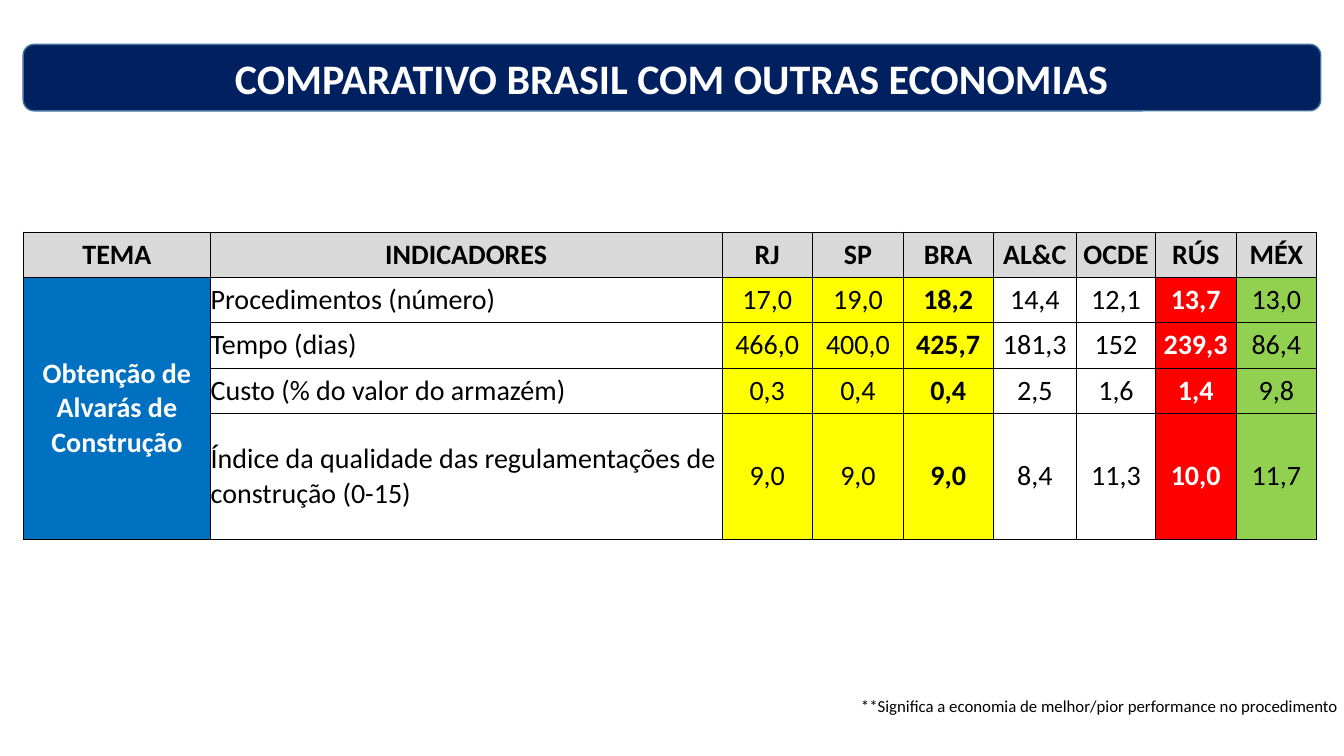
from dataclasses import dataclass

from lxml.etree import SubElement
from pptx import Presentation
from pptx.dml.color import RGBColor
from pptx.enum.shapes import MSO_SHAPE as Shape
from pptx.enum.text import MSO_ANCHOR as Anchor, MSO_AUTO_SIZE as AutoSize, PP_ALIGN as Align
from pptx.oxml.ns import qn
from pptx.util import Inches, Pt


@dataclass(frozen=True)
class Theme:
    font: str = "Calibri"
    title_size: int = 30
    table_size: int = 20
    note_size: int = 12
    black: str = "000000"
    white: str = "FFFFFF"
    navy: str = "002060"
    outline: str = "43739E"
    gray: str = "D9D9D9"
    blue: str = "0070C0"
    yellow: str = "FFFF00"
    red: str = "FF0000"
    green: str = "92D050"


theme = Theme()


def style_text(frame, size, color, bold=False, align=Align.CENTER):
    para = frame.paragraphs[0]
    para.alignment = align
    for span in para.runs:
        span.font.name = theme.font
        span.font.size = Pt(size)
        span.font.bold = bold
        span.font.color.rgb = RGBColor.from_string(color)


def add_borders(cell):
    properties = cell._tc.get_or_add_tcPr()
    for side in ("lnL", "lnR", "lnT", "lnB"):
        line = SubElement(properties, qn(f"a:{side}"), w=str(Pt(0.5)))
        fill = SubElement(line, qn("a:solidFill"))
        SubElement(fill, qn("a:srgbClr"), val=theme.black)


deck = Presentation()
deck.slide_width = Inches(13.33)
deck.slide_height = Inches(7.5)
page = deck.slides.add_slide(deck.slide_layouts[6])

rows = [
    ["TEMA", "INDICADORES", "RJ", "SP", "BRA", "AL&C", "OCDE", "RÚS", "MÉX"],
    ["Obtenção de Alvarás de Construção", "Procedimentos (número)",
     "17,0", "19,0", "18,2", "14,4", "12,1", "13,7", "13,0"],
    ["", "Tempo (dias)", "466,0", "400,0", "425,7", "181,3", "152", "239,3", "86,4"],
    ["", "Custo (% do valor do armazém)", "0,3", "0,4", "0,4", "2,5", "1,6", "1,4", "9,8"],
    ["", "Índice da qualidade das regulamentações de construção (0-15)",
     "9,0", "9,0", "9,0", "8,4", "11,3", "10,0", "11,7"],
]
column_widths = [1.86, 5.07, 0.9, 0.9, 0.89, 0.83, 0.78, 0.8, 0.8]
row_heights = [0.45, 0.45, 0.45, 0.45, 1.25]
column_fills = [theme.blue, None, theme.yellow, theme.yellow, theme.yellow,
                None, None, theme.red, theme.green]
theme_column, indicator_column, brazil_column, russia_column = 0, 1, 4, 7
white_columns = (theme_column, russia_column)
bold_columns = (theme_column, brazil_column, russia_column)

table = page.shapes.add_table(
    len(rows), len(column_widths), Inches(0.23), Inches(2.3),
    Inches(sum(column_widths)), Inches(sum(row_heights))).table
for column, width in zip(table.columns, column_widths):
    column.width = Inches(width)
for row, height in zip(table.rows, row_heights):
    row.height = Inches(height)

for row_index, values in enumerate(rows):
    header = row_index == 0
    for column_index, value in enumerate(values):
        cell = table.cell(row_index, column_index)
        add_borders(cell)
        fill = theme.gray if header else column_fills[column_index]
        if fill:
            cell.fill.solid()
            cell.fill.fore_color.rgb = RGBColor.from_string(fill)
        else:
            cell.fill.background()
        cell.margin_left = cell.margin_right = cell.margin_top = cell.margin_bottom = 0
        cell.vertical_anchor = Anchor.MIDDLE
        cell.text_frame.text = value
        white = not header and column_index in white_columns
        left = not header and column_index == indicator_column
        style_text(cell.text_frame, theme.table_size,
                   theme.white if white else theme.black,
                   header or column_index in bold_columns,
                   Align.LEFT if left else Align.CENTER)
table.cell(1, theme_column).merge(table.cell(len(rows) - 1, theme_column))

note = page.shapes.add_textbox(Inches(8.39), Inches(6.85), Inches(4.98), Inches(0.3))
note.text_frame.word_wrap = False
note.text_frame.auto_size = AutoSize.SHAPE_TO_FIT_TEXT
note.text_frame.text = "**Significa a economia de melhor/pior performance no procedimento"
style_text(note.text_frame, theme.note_size, theme.black, align=Align.RIGHT)

title = page.shapes.add_shape(
    Shape.ROUNDED_RECTANGLE, Inches(0.23), Inches(0.44), Inches(12.87), Inches(0.66))
title.shadow.inherit = False
title.fill.solid()
title.fill.fore_color.rgb = RGBColor.from_string(theme.navy)
title.line.color.rgb = RGBColor.from_string(theme.outline)
title.line.width = Pt(1)
title.text_frame.vertical_anchor = Anchor.MIDDLE
title.text_frame.text = "COMPARATIVO BRASIL COM OUTRAS ECONOMIAS"
style_text(title.text_frame, theme.title_size, theme.white, bold=True)

deck.save("out.pptx")
